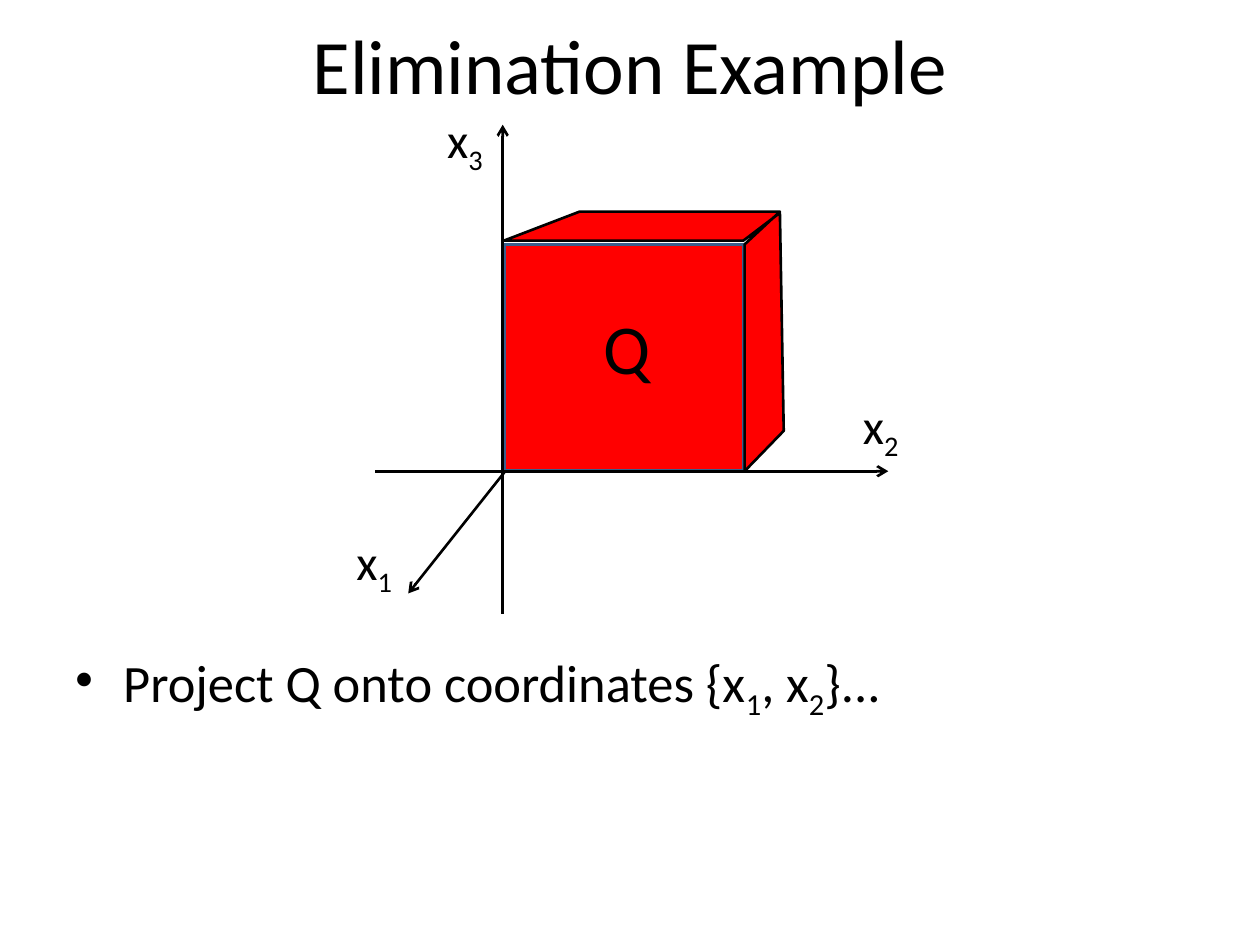
from lxml.etree import SubElement
from pptx import Presentation
from pptx.dml.color import RGBColor as Rgb
from pptx.enum.shapes import MSO_CONNECTOR as Connector, MSO_SHAPE as Preset
from pptx.enum.text import MSO_ANCHOR as Anchor, MSO_AUTO_SIZE as AutoSize, PP_ALIGN as Align
from pptx.oxml.ns import qn
from pptx.util import Inches, Pt

COLORS = {"ink": "000000", "cube": "FF0000", "edge": "3A5F8C"}
COLUMNS, ROWS = 100, 75


class Sketch:
    """Draws styled elements on one slide; an underscore in text lowers the next character."""

    def __init__(self, deck, font="Calibri"):
        self.page = deck.slides.add_slide(deck.slide_layouts[5])
        self.shapes = self.page.shapes
        self.font = font
        self.column = deck.slide_width / COLUMNS
        self.row = deck.slide_height / ROWS

    def place(self, *lengths):
        return [round(length * (self.row if index % 2 else self.column))
                for index, length in enumerate(lengths)]

    def color(self, name):
        return Rgb.from_string(COLORS[name])

    def outline(self, line, name="ink", width=1.5):
        line.color.rgb = self.color(name)
        line.width = Pt(width)

    def set_text(self, para, text, size):
        para.font.name, para.font.size = self.font, Pt(size)
        para.font.color.rgb = self.color("ink")
        first, *rest = text.split("_")
        para.add_run().text = first
        for part in rest:
            lowered = para.add_run()
            lowered.text = part[0]
            lowered.font._element.set("baseline", "-25000")
            if part[1:]:
                para.add_run().text = part[1:]

    def title(self, text, area, size=44):
        box = self.shapes.title
        box.left, box.top, box.width, box.height = self.place(*area)
        box.text_frame.vertical_anchor = Anchor.MIDDLE
        para = box.text_frame.paragraphs[0]
        para.alignment = Align.CENTER
        self.set_text(para, text, size)

    def label(self, text, area, size=28):
        frame = self.shapes.add_textbox(*self.place(*area)).text_frame
        frame.word_wrap = False
        frame.auto_size = AutoSize.SHAPE_TO_FIT_TEXT
        self.set_text(frame.paragraphs[0], text, size)

    def bullet(self, text, area, size=30, indent=0.38):
        frame = self.shapes.add_textbox(*self.place(*area)).text_frame
        frame.word_wrap = True
        para = frame.paragraphs[0]
        para.space_before = Pt(size * 0.2)
        self.set_text(para, text, size)
        properties = para._p.get_or_add_pPr()
        properties.set("marL", str(Inches(indent)))
        properties.set("indent", str(-Inches(indent)))
        spacing = properties.find(qn("a:spcBef"))
        mark = SubElement(properties, qn("a:buChar"), char="•")
        spacing.addnext(mark)

    def solid(self, shape, edge, width):
        shape.shadow.inherit = False
        shape.fill.solid()
        shape.fill.fore_color.rgb = self.color("cube")
        self.outline(shape.line, edge, width)

    def face(self, area):
        self.solid(self.shapes.add_shape(Preset.RECTANGLE, *self.place(*area)), "edge", 2)

    def polygon(self, points):
        start, *others = [self.place(*point) for point in points]
        builder = self.shapes.build_freeform(*start)
        builder.add_line_segments(others, close=True)
        self.solid(builder.convert_to_shape(), "ink", 1.5)

    def axis(self, start, end):
        arrow = self.shapes.add_connector(Connector.STRAIGHT, *self.place(*start, *end))
        self.outline(arrow.line)
        SubElement(arrow.line._get_or_add_ln(), qn("a:tailEnd"), type="arrow")
        SubElement(arrow._element.spPr, qn("a:effectLst"))


def main():
    deck = Presentation()
    deck.slide_width, deck.slide_height = Inches(10), Inches(7.5)
    sketch = Sketch(deck)
    sketch.title("Elimination Example", (5, 0, 90, 10.1))

    sketch.face((40, 19.4, 19, 18))
    sketch.polygon([(40, 19.1), (46, 16.8), (61.9, 16.8), (59.1, 19.4), (59.1, 37.4),
                    (62.2, 34.2), (61.9, 16.9), (59, 19.1)])

    sketch.axis((39.9, 48.7), (39.9, 9.9))
    sketch.axis((29.8, 37.4), (70.5, 37.4))
    sketch.axis((40.1, 37.4), (32.4, 47.1))

    for name, left, top in (("x_1", 27.3, 41.7), ("x_2", 67.5, 30.9), ("x_3", 34.5, 8.2)):
        sketch.label(name, (left, top, 5.1, 5.7))
    sketch.label("Q", (46.9, 23.7, 5.8, 7.7), size=40)
    sketch.bullet("Project Q onto coordinates {x_1, x_2}...", (5, 51.1, 92, 18.6))

    deck.save("out.pptx")


if __name__ == "__main__":
    main()
